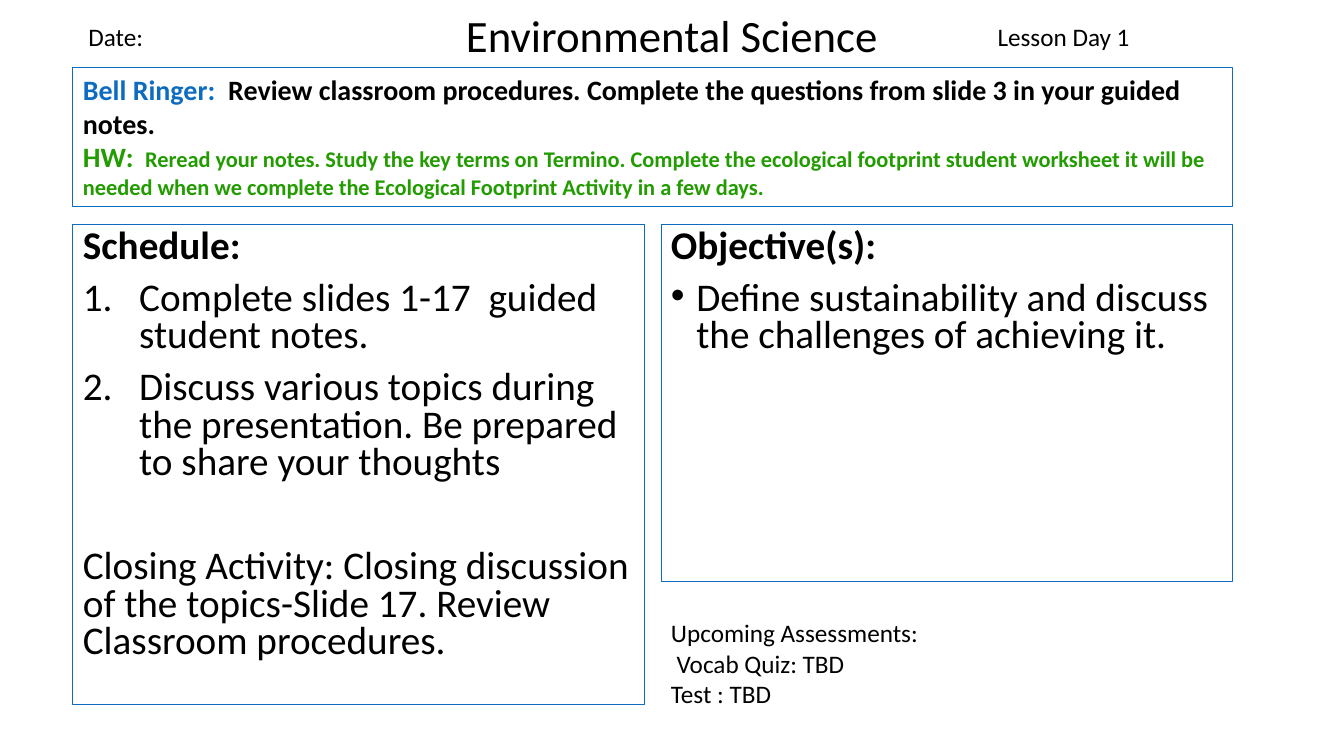
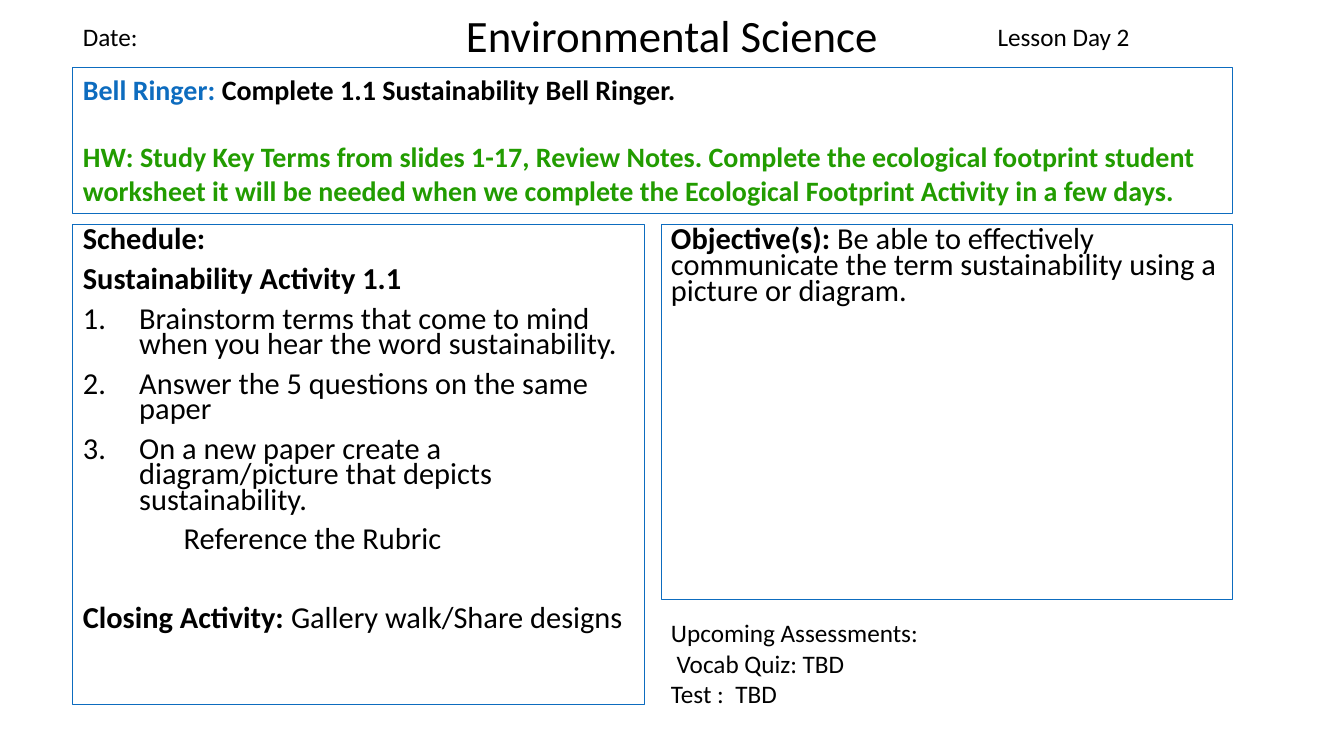
from dataclasses import dataclass
from typing import Optional

from lxml.etree import SubElement
from pptx import Presentation
from pptx.dml.color import RGBColor
from pptx.enum.text import MSO_ANCHOR as Anchor, MSO_AUTO_SIZE as AutoSize, PP_ALIGN as Align
from pptx.oxml.ns import qn
from pptx.util import Cm, Pt

COLORS = {"text": "000000", "blue": "0D6CBF", "green": "229C00"}
FONT = "Calibri"

# Shared grid, in centimetres
LEFT, COLUMN, GAP = 1.84, 14.4, 0.42
RIGHT = LEFT + COLUMN + GAP
FULL = 2 * COLUMN + GAP
PANEL_TOP, SCHEDULE_HEIGHT = 5.66, 12.09


@dataclass
class Run:
    text: str
    color: Optional[str] = None
    size: Optional[float] = None
    bold: Optional[bool] = None


@dataclass
class Line:
    """One paragraph; indents in centimetres, spacing in points."""
    content: object
    color: str = "text"
    bold: bool = False
    bullet: Optional[str] = None
    indent: float = 0
    before: Optional[float] = None


def style_font(font, color=None, size=None, bold=None):
    if color:
        font.color.rgb = RGBColor.from_string(COLORS[color])
    if size:
        font.size = Pt(size)
    if bold is not None:
        font.bold = bold


def set_bullet(paragraph, bullet):
    hanging = Cm(1.42 if bullet == "number" else 0.64)
    properties = paragraph._p.get_or_add_pPr()
    properties.set("marL", str(hanging))
    properties.set("indent", str(-hanging))
    if bullet == "number":
        SubElement(properties, qn("a:buFont"), typeface="+mj-lt")
        SubElement(properties, qn("a:buAutoNum"), type="arabicPeriod")
    else:
        SubElement(properties, qn("a:buFont"), typeface="Arial")
        SubElement(properties, qn("a:buChar"), char="•")


def fill_paragraph(paragraph, line, size, spacing, before):
    if line.bullet:
        set_bullet(paragraph, line.bullet)
    elif line.indent:
        paragraph._p.get_or_add_pPr().set("marL", str(Cm(line.indent)))
    paragraph.line_spacing = spacing
    paragraph.space_before = Pt(before if line.before is None else line.before)
    paragraph.font.name = FONT
    style_font(paragraph.font, line.color, size, line.bold)
    runs = [Run(line.content)] if isinstance(line.content, str) else line.content
    for part in runs:
        run = paragraph.add_run()
        run.text = part.text
        style_font(run.font, part.color, part.size, part.bold)


def add_text(slide, box, lines, size=18, spacing=1.0, before=0, framed=False):
    shape = slide.shapes.add_textbox(*map(Cm, box))
    frame = shape.text_frame
    frame.word_wrap = True
    if framed:
        shape.line.color.rgb = RGBColor.from_string(COLORS["blue"])
        shape.line.width = Pt(0.75)
    for index, line in enumerate(lines):
        paragraph = frame.add_paragraph() if index else frame.paragraphs[0]
        fill_paragraph(paragraph, line, size, spacing, before)


def set_title(slide, text):
    title = slide.shapes.title
    title.left, title.top, title.width, title.height = map(Cm, (10.66, 0.06, 12.55, 1.62))
    frame = title.text_frame
    frame.auto_size = AutoSize.NONE
    frame.vertical_anchor = Anchor.MIDDLE
    paragraph = frame.paragraphs[0]
    paragraph.alignment = Align.CENTER
    paragraph.font.name = FONT
    style_font(paragraph.font, "text", 32)
    paragraph.add_run().text = text


def add_lesson(presentation, lesson):
    slide = presentation.slides.add_slide(presentation.slide_layouts[5])
    # Heading row
    set_title(slide, "Environmental Science")
    add_text(slide, (LEFT, 0.41, 8.81, 1.02), [Line("Date:", indent=lesson["date_indent"])])
    add_text(slide, (24.89, 0.41, 5.66, 1.02), [Line(lesson["day"])])
    # Bell ringer and homework
    add_text(slide, (LEFT, 1.7, FULL, lesson["bell_height"]), lesson["bell"], 20, framed=True)
    # Schedule and objectives
    panel_style = dict(size=lesson["size"], spacing=lesson["spacing"], before=10, framed=True)
    add_text(slide, (LEFT, PANEL_TOP, COLUMN, SCHEDULE_HEIGHT), lesson["schedule"], **panel_style)
    add_text(slide, (RIGHT, PANEL_TOP, COLUMN, lesson["objective_height"]),
             lesson["objectives"], **panel_style)
    # Assessments
    add_text(slide, (RIGHT, 15.44, COLUMN, 2.57), [
        Line("Upcoming Assessments:"),
        Line("Vocab Quiz: TBD", indent=0.14),
        Line(lesson["test"]),
    ])


LESSONS = [
    {
        "day": "Lesson Day 1",
        "date_indent": 0.14,
        "bell_height": 3.51,
        "bell": [
            Line([Run("Bell Ringer:  ", "blue"),
                  Run("Review classroom procedures. Complete the questions from slide 3 "
                      "in your guided notes.")], bold=True),
            Line([Run("HW: "),
                  Run(" Reread your notes. Study the key terms on Termino. Complete the "
                      "ecological footprint student worksheet it will be needed when we "
                      "complete the Ecological Footprint Activity in a few days.", size=16)],
                 "green", bold=True),
        ],
        "size": 28,
        "spacing": 0.8,
        "schedule": [
            Line("Schedule:", bold=True),
            Line("Complete slides 1-17  guided student notes.", bullet="number"),
            Line("Discuss various topics during the presentation. Be prepared to share "
                 "your thoughts", bullet="number"),
            Line("Closing Activity: Closing discussion of the topics-Slide 17. Review "
                 "Classroom procedures.", before=47),
        ],
        "objective_height": 8.99,
        "objectives": [
            Line("Objective(s):", bold=True),
            Line("Define sustainability and discuss the challenges of achieving it.",
                 bullet="dot"),
        ],
        "test": "Test : TBD",
    },
    {
        "day": "Lesson Day 2",
        "date_indent": 0,
        "bell_height": 3.68,
        "bell": [
            Line([Run("Bell Ringer: ", "blue"),
                  Run("Complete 1.1 Sustainability Bell Ringer.")], bold=True),
            Line("HW: Study Key Terms from slides 1-17, Review Notes. Complete the "
                 "ecological footprint student worksheet it will be needed when we "
                 "complete the Ecological Footprint Activity in a few days.",
                 "green", bold=True, before=24),
        ],
        "size": 21.7,
        "spacing": 0.7,
        "schedule": [
            Line("Schedule:", bold=True),
            Line("Sustainability Activity 1.1", bold=True),
            Line("Brainstorm terms that come to mind when you hear the word "
                 "sustainability.", bullet="number"),
            Line("Answer the 5 questions on the same paper", bullet="number"),
            Line("On a new paper create a diagram/picture that depicts sustainability.",
                 bullet="number"),
            Line("Reference the Rubric", indent=2.54),
            Line([Run("Closing Activity: ", bold=True), Run("Gallery walk/Share designs")],
                 before=38),
        ],
        "objective_height": 9.45,
        "objectives": [
            Line([Run("Objective(s): ", bold=True),
                  Run("Be able to effectively communicate the term sustainability using "
                      "a picture or diagram.")]),
        ],
        "test": "Test :  TBD",
    },
]


def main():
    presentation = Presentation()
    presentation.slide_width, presentation.slide_height = Cm(33.87), Cm(19.05)
    for lesson in LESSONS:
        add_lesson(presentation, lesson)
    presentation.save("out.pptx")


if __name__ == "__main__":
    main()
